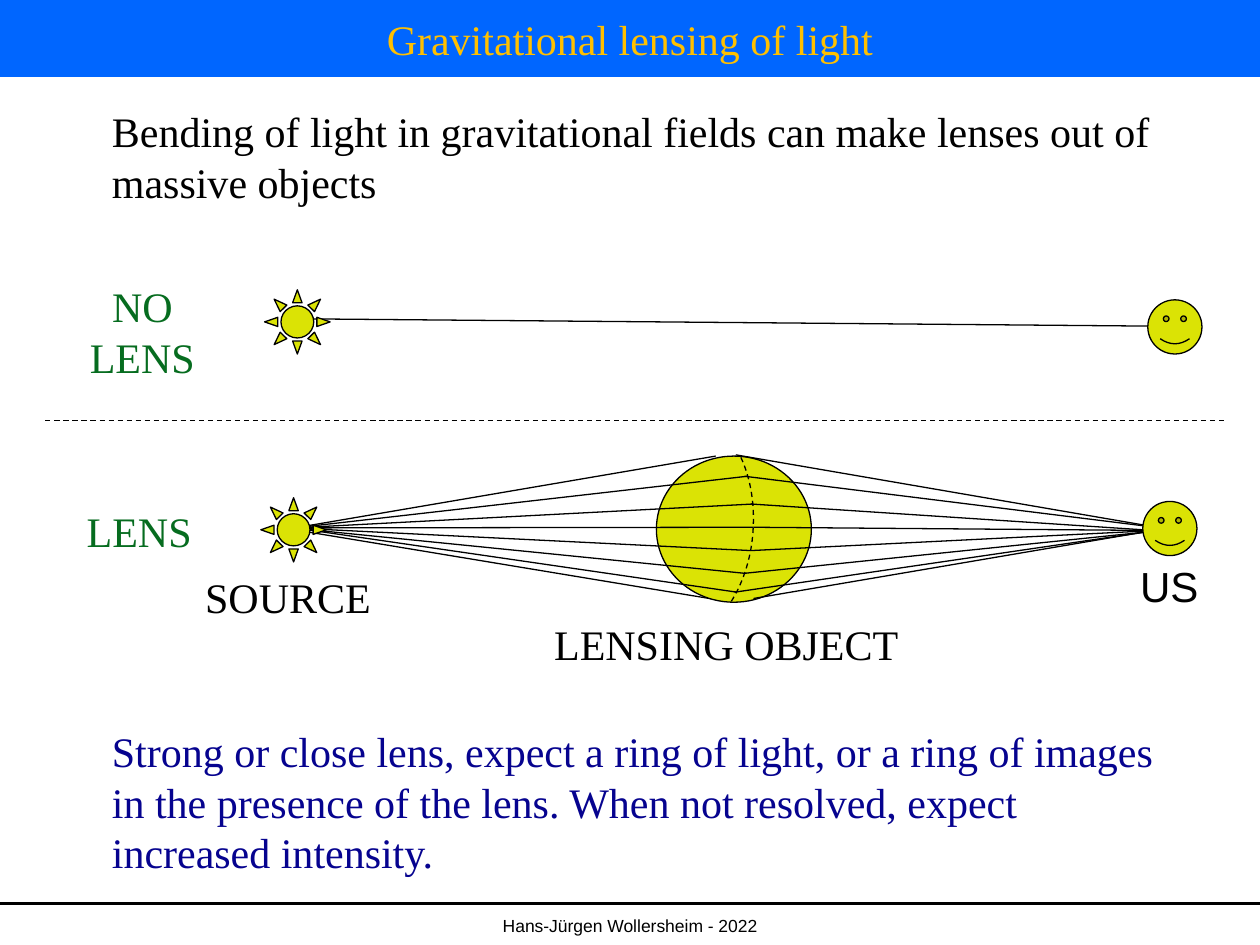
from pptx import Presentation
from pptx import util as u
from pptx.dml.color import RGBColor
from pptx.enum import dml, shapes, text
from pptx.oxml.ns import qn
from lxml import etree

BLACK = RGBColor(0x00, 0x00, 0x00)
BLUE = RGBColor(0x00, 0x66, 0xFF)
GOLD = RGBColor(0xFF, 0xC0, 0x00)
YELLOW = RGBColor(0xDB, 0xE3, 0x05)
GREEN = RGBColor(0x06, 0x6C, 0x1F)
NAVY = RGBColor(0x06, 0x03, 0x8F)
SERIF, SANS = "Times New Roman", "Arial"

# The slide is a grid of 100 columns by 75 rows of square cells
COLS, ROWS = 100, 75
CELL = u.Inches(0.1)


def cells(*values):
    return [u.Emu(round(v * CELL)) for v in values]


def add_run(p, words, color, size=24, font=SERIF):
    r = p.add_run()
    r.text = words
    r.font.size, r.font.name = u.Pt(size), font
    r.font.color.rgb = color


def add_text(s, box, lines, color=BLACK, size=24, font=SERIF,
             wrap=False, align=text.PP_ALIGN.LEFT):
    tf = s.shapes.add_textbox(*cells(*box)).text_frame
    tf.word_wrap = wrap
    for i, words in enumerate(lines):
        p = tf.paragraphs[0] if i == 0 else tf.add_paragraph()
        p.alignment = align
        add_run(p, words, color, size, font)


def outline(line, width=0.75, dashed=False):
    line.color.rgb = BLACK
    line.width = u.Pt(width)
    if dashed:
        line.dash_style = dml.MSO_LINE.DASH


def add_line(s, start, end, width=0.75, dashed=False):
    c = s.shapes.add_connector(shapes.MSO_CONNECTOR.STRAIGHT,
                               *cells(*start, *end))
    outline(c.line, width, dashed)
    etree.SubElement(c._element.spPr, qn("a:effectLst"))


def add_body(s, kind, box, adjust=None):
    sp = s.shapes.add_shape(kind, *cells(*box))
    sp.shadow.inherit = False
    sp.fill.solid()
    sp.fill.fore_color.rgb = YELLOW
    outline(sp.line)
    if adjust is not None:
        sp.adjustments[0] = adjust


def add_sun(s, x, y):
    add_body(s, shapes.MSO_SHAPE.SUN, (x, y, 5.2, 5.1), 0.25)


def add_observer(s, x, y):
    add_body(s, shapes.MSO_SHAPE.SMILEY_FACE, (x, y, 4.3, 4.3), 0.05)


def add_curve(s, start, *beziers, steps=12):
    """Dashed open curve through cubic Bezier pieces."""
    points, p0 = [], start
    for p1, p2, p3 in beziers:
        for i in range(1, steps + 1):
            t = i / steps
            weights = ((1 - t) ** 3, 3 * t * (1 - t) ** 2,
                       3 * t * t * (1 - t), t ** 3)
            points.append(tuple(sum(w * p[axis] for w, p in
                                    zip(weights, (p0, p1, p2, p3)))
                                for axis in (0, 1)))
        p0 = p3
    builder = s.shapes.build_freeform(*cells(*start))
    builder.add_line_segments([cells(*p) for p in points], close=False)
    sp = builder.convert_to_shape()
    sp.shadow.inherit = False
    sp.fill.background()
    outline(sp.line, dashed=True)


def title_bar(s, box):
    sp = s.shapes.title
    sp.left, sp.top, sp.width, sp.height = cells(*box)
    sp.fill.solid()
    sp.fill.fore_color.rgb = BLUE
    tf = sp.text_frame
    tf.vertical_anchor = text.MSO_ANCHOR.MIDDLE
    p = tf.paragraphs[0]
    p.alignment = text.PP_ALIGN.CENTER
    add_run(p, "Gravitational lensing of light", GOLD)


def footer(s, box):
    x, y, w, h = box
    add_line(s, (x, y), (x + w, y), 1.5)
    add_text(s, (x, y + 0.4, w, h - 0.4), ["Hans-Jürgen Wollersheim - 2022"],
             size=10, font=SANS, wrap=True, align=text.PP_ALIGN.CENTER)


def no_lens(s, box):
    x, y, w, h = box
    add_line(s, (x + 17.4, y + 3.5), (x + 87.1, y + 4.1))
    add_sun(s, x + 14.9, y + 1.2)
    add_observer(s, x + w - 4.3, y + 2)
    add_text(s, (x, y, 10.4, h), ["NO", "LENS"], GREEN,
             align=text.PP_ALIGN.CENTER)


def lens(s, box):
    x, y, w, h = box

    def at(px, py):
        return x + px, y + py

    # Outermost rays pass behind the lensing object
    add_line(s, at(17.5, 5.8), at(50.9, 0.1))
    add_line(s, at(17.2, 5.9), at(51.6, 11.6))
    add_body(s, shapes.MSO_SHAPE.OVAL, (*at(46.2, 0.1), 12.3, 11.6))
    add_line(s, at(53.9, 11.4), at(87.4, 5.7))
    add_line(s, at(52.5, 0), at(86.8, 5.9))

    # Plane of the lens
    add_curve(s, at(52.9, 0.2),
              (at(53.6, 1.7), at(53.9, 3.4), at(53.9, 5.1)),
              (at(53.9, 7.5), at(53.3, 9.8), at(52.1, 11.7)))

    # Inner rays: source x, bend x before and after, bend y, observer x and y
    for sx, ax, bx, by, ox, oy in ((17.5, 53.4, 53.2, 1.7, 86.2, 5.8),
                                   (17.5, 53.9, 53.7, 3.9, 85.6, 6),
                                   (17.3, 53.9, 53.9, 5.75, 85.6, 6),
                                   (17.3, 53.7, 53.7, 7.6, 85.9, 6),
                                   (17.3, 53.2, 53.2, 9.4, 85.3, 6.1),
                                   (17.5, 52.6, 52.4, 10.9, 85.9, 6)):
        add_line(s, at(sx, 5.8), at(ax, by))
        add_line(s, at(bx, by), at(ox, oy))

    add_sun(s, *at(14.8, 3.4))
    add_observer(s, x + w - 4.3, y + 3.7)

    # Labels
    add_text(s, (*at(0, 3.5), 10.7, 5), ["LENS"], GREEN)
    add_text(s, (*at(9.4, 8.8), 15.3, 5.1), ["SOURCE"])
    add_text(s, (*at(37.1, 12.5), 30.7, 5), ["LENSING OBJECT"])
    add_text(s, (*at(83.6, 7.9), 6.6, 5), ["US"], font=SANS)


def main():
    prs = Presentation()
    prs.slide_width, prs.slide_height = cells(COLS, ROWS)
    s = prs.slides.add_slide(prs.slide_layouts[5])

    title_bar(s, (0, 0, COLS, 6.1))
    add_text(s, (7.9, 7.9, 85.4, 9.1),
             ["Bending of light in gravitational fields can make lenses "
              "out of massive objects"], wrap=True)
    no_lens(s, (6.1, 21.8, 89.3, 9.1))
    add_line(s, (3.6, 33.4), (97.2, 33.4), dashed=True)
    lens(s, (5.9, 36.1, 89.1, 17.5))
    add_text(s, (7.9, 57.1, 85.4, 13.1),
             ["Strong or close lens, expect a ring of light, or a ring of "
              "images in the presence of the lens. When not resolved, expect "
              "increased intensity."], NAVY, wrap=True)
    footer(s, (0, 71.7, COLS, 3.3))
    prs.save("out.pptx")


if __name__ == "__main__":
    main()
